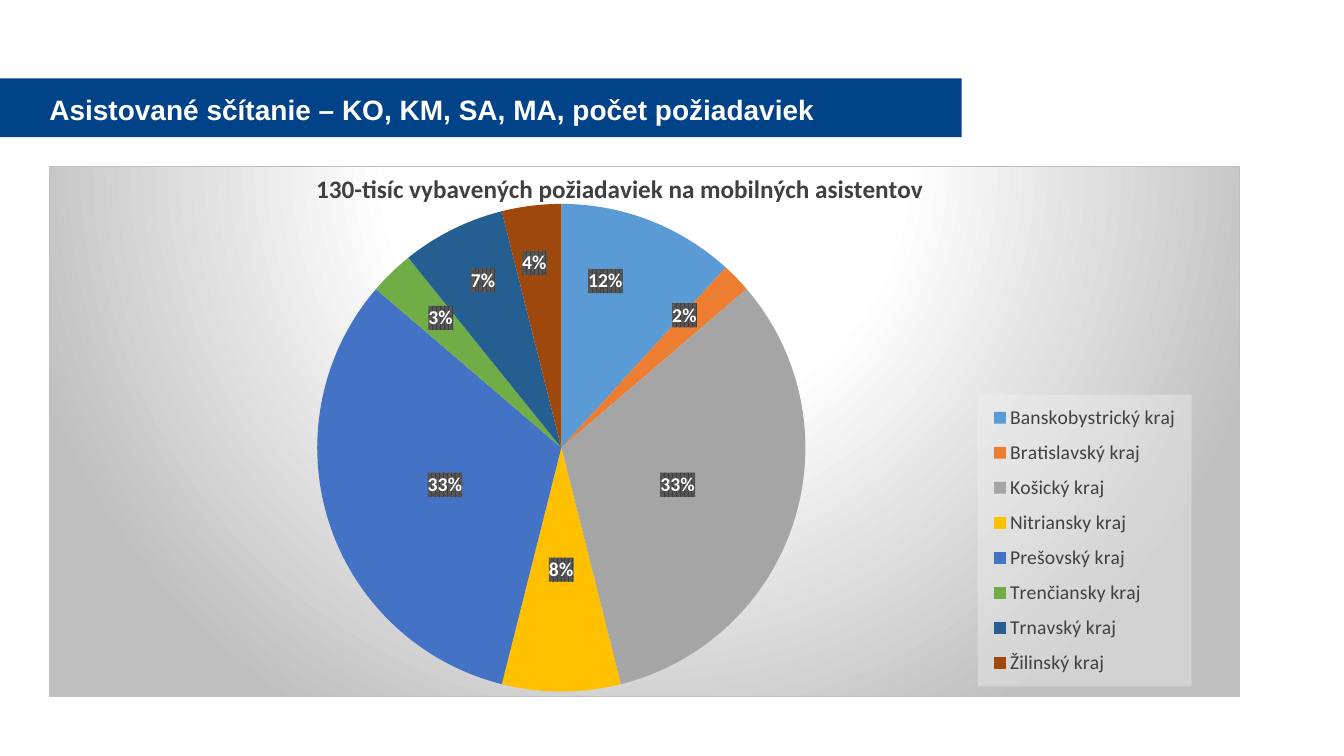
from copy import deepcopy

from pptx import Presentation
from pptx.chart.data import CategoryChartData
from pptx.dml.color import RGBColor
from pptx.enum.chart import XL_CHART_TYPE, XL_LABEL_POSITION, XL_LEGEND_POSITION
from pptx.enum.shapes import MSO_SHAPE
from pptx.enum.text import MSO_ANCHOR, PP_ALIGN
from pptx.oxml import parse_xml
from pptx.oxml.ns import nsdecls, qn
from pptx.util import Pt

NAVY = RGBColor(0x00, 0x43, 0x88)
WHITE = RGBColor(0xFF, 0xFF, 0xFF)
DARK_GRAY = RGBColor(0x40, 0x40, 0x40)

REGIONS = [
    ("Banskobystrický kraj", 12, RGBColor(0x5B, 0x9B, 0xD5)),
    ("Bratislavský kraj", 2, RGBColor(0xED, 0x7D, 0x31)),
    ("Košický kraj", 33, RGBColor(0xA5, 0xA5, 0xA5)),
    ("Nitriansky kraj", 8, RGBColor(0xFF, 0xC0, 0x00)),
    ("Prešovský kraj", 33, RGBColor(0x44, 0x72, 0xC4)),
    ("Trenčiansky kraj", 3, RGBColor(0x70, 0xAD, 0x47)),
    ("Trnavský kraj", 7, RGBColor(0x25, 0x5E, 0x91)),
    ("Žilinský kraj", 4, RGBColor(0x9E, 0x48, 0x0E)),
]
# Shift of a label from the middle of its slice, as a share of the chart
LABEL_SHIFTS = {0: (0, -0.1), 1: (0.03, -0.09), 5: (-0.03, -0.08),
                6: (-0.02, -0.11), 7: (-0.01, -0.12)}


def chart_xml(tag, content):
    return parse_xml(f"<c:{tag} {nsdecls('c', 'a')}>{content}</c:{tag}>")


def set_layout(element, index, **settings):
    """Give a chart part a manual layout, placed as its child number index."""
    for old_layout in element.findall(qn("c:layout")):
        element.remove(old_layout)
    content = "".join(f'<c:{name} val="{value}"/>' for name, value in settings.items())
    element.insert(index, chart_xml("layout", f"<c:manualLayout>{content}</c:manualLayout>"))


presentation = Presentation()
presentation.slide_width = Pt(960)
presentation.slide_height = Pt(540)
slide = presentation.slides.add_slide(presentation.slide_layouts[5])

# Title on its bar
title = slide.shapes.title
title.left, title.top, title.width, title.height = Pt(28), Pt(65), Pt(642), Pt(29)
title.text_frame.text = "Asistované sčítanie – KO, KM, SA, MA, počet požiadaviek"
title.text_frame.vertical_anchor = MSO_ANCHOR.MIDDLE
paragraph = title.text_frame.paragraphs[0]
paragraph.alignment = PP_ALIGN.LEFT
paragraph.line_spacing = 0.9
paragraph.font.name = "Arial"
paragraph.font.size = Pt(20)
paragraph.font.bold = True
paragraph.font.color.rgb = WHITE

title_bar = slide.shapes.add_shape(MSO_SHAPE.RECTANGLE, 0, Pt(56), Pt(687), Pt(42))
title_bar.shadow.inherit = False
title_bar.fill.solid()
title_bar.fill.fore_color.rgb = NAVY
title_bar.line.fill.background()
title._element.addprevious(title_bar._element)

# Pie chart
chart_data = CategoryChartData()
chart_data.categories = [name for name, share, color in REGIONS]
chart_data.add_series("Series 1", [share for name, share, color in REGIONS])
chart = slide.shapes.add_chart(
    XL_CHART_TYPE.PIE, Pt(35.3), Pt(118.8), Pt(850.3), Pt(379.4), chart_data
).chart
chart.font.name = "Calibri"
chart.font.size = Pt(10)

chart_part = chart._chartSpace.find(qn("c:chart"))
chart_part.addprevious(parse_xml(f'<c:roundedCorners {nsdecls("c")} val="0"/>'))
chart_part.addnext(chart_xml("spPr", """
    <a:gradFill><a:gsLst>
      <a:gs pos="0"><a:srgbClr val="FFFFFF"/></a:gs>
      <a:gs pos="39000"><a:srgbClr val="FFFFFF"/></a:gs>
      <a:gs pos="100000"><a:srgbClr val="BFBFBF"/></a:gs>
    </a:gsLst><a:path path="circle">
      <a:fillToRect l="50000" t="-80000" r="50000" b="180000"/>
    </a:path></a:gradFill>
    <a:ln w="9525"><a:solidFill><a:srgbClr val="BFBFBF"/></a:solidFill></a:ln>"""))
set_layout(chart_part.find(qn("c:plotArea")), 0, layoutTarget="inner",
           xMode="edge", yMode="edge", x=0.22, y=0.07, w=0.42, h=0.92)

chart.has_title = True
chart_title = chart.chart_title
chart_title.text_frame.text = "130-tisíc vybavených požiadaviek na mobilných asistentov"
title_font = chart_title.text_frame.paragraphs[0].runs[0].font
title_font.name = "Calibri"
title_font.size = Pt(18)
title_font.bold = True
title_font.color.rgb = DARK_GRAY
set_layout(chart_title._element, 1, xMode="edge", yMode="edge", x=0.22, y=0)

plot = chart.plots[0]
plot.vary_by_categories = True
series = plot.series[0]
for index, (name, share, color) in enumerate(REGIONS):
    slice_fill = series.points[index].format.fill
    slice_fill.solid()
    slice_fill.fore_color.rgb = color

# Labels
labels = series.data_labels
labels.show_value = True
labels.number_format = '0"%"'
labels.number_format_is_linked = False
labels.position = XL_LABEL_POSITION.CENTER
labels.font.name = "Calibri"
labels.font.size = Pt(14)
labels.font.bold = True
labels.font.color.rgb = WHITE
labels_element = labels._element
labels_element.find(qn("c:numFmt")).addnext(chart_xml("spPr", """
    <a:pattFill prst="pct75">
      <a:fgClr><a:srgbClr val="404040"/></a:fgClr>
      <a:bgClr><a:srgbClr val="595959"/></a:bgClr>
    </a:pattFill><a:ln><a:noFill/></a:ln>"""))
shared_settings = [child for child in labels_element if child.tag != qn("c:showLeaderLines")]
for position, (index, (x, y)) in enumerate(LABEL_SHIFTS.items()):
    label = chart_xml("dLbl", f'<c:idx val="{index}"/>')
    set_layout(label, 1, x=x, y=y)
    label.extend(deepcopy(shared_settings))
    labels_element.insert(position, label)

# Legend
chart.has_legend = True
legend = chart.legend
legend.position = XL_LEGEND_POSITION.RIGHT
legend.include_in_layout = False
legend.font.name = "Calibri"
legend.font.size = Pt(14)
legend.font.color.rgb = DARK_GRAY
set_layout(legend._element, 1, xMode="edge", yMode="edge", x=0.78, y=0.43, w=0.18, h=0.55)
legend._element.find(qn("c:overlay")).addnext(chart_xml("spPr", """
    <a:solidFill><a:srgbClr val="F2F2F2"><a:alpha val="39000"/></a:srgbClr></a:solidFill>
    <a:ln><a:noFill/></a:ln>"""))

presentation.save("out.pptx")
